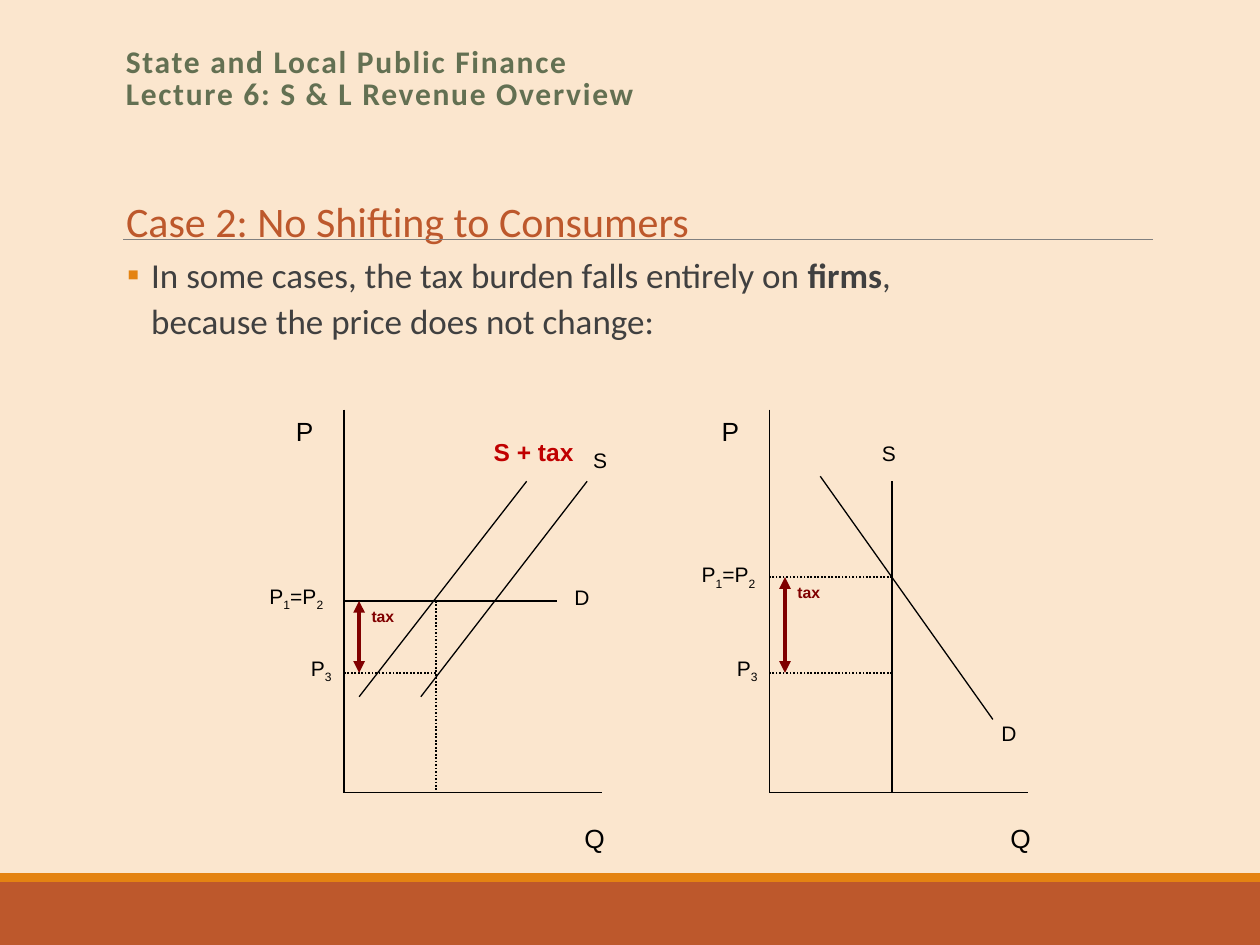
from lxml.etree import SubElement
from pptx import Presentation
from pptx.dml.color import RGBColor
from pptx.enum.dml import MSO_LINE
from pptx.enum.shapes import MSO_CONNECTOR, MSO_SHAPE
from pptx.enum.text import MSO_ANCHOR, MSO_AUTO_SIZE, PP_ALIGN
from pptx.oxml.ns import qn
from pptx.util import Inches, Pt

COLORS = {
    "background": "FBE6CE", "band": "BD582C", "stripe": "E48312",
    "rule": "808080", "course": "637052", "body": "404040",
    "ink": "000000", "tax": "800000", "shifted": "C00000",
}
COURSE = "State and Local Public Finance\vLecture 6: S & L Revenue Overview"
CASE = "Case 2: No Shifting to Consumers"
STATEMENT = [("In some cases, the tax burden falls entirely on ", {}),
             ("firms", {"bold": True}),
             (", because the price does not change:", {})]
SUB = {"baseline": -25000}
EQUAL_PRICES = [("P", {}), ("1", SUB), ("=P", {}), ("2", SUB)]
NET_PRICE = [("P", {}), ("3", SUB)]

BANDS = [("band", 7, 0.5), ("stripe", 6.93, 0.07)]
AXIS_TOP, AXIS_BASE, AXIS_LENGTH = 3.25, 6.29, 2.05
NET_Y = 5.34

PANELS = [
    {
        "axis": 2.73, "price": 4.77, "quantity": 0.73, "price_label": (-0.69, -0.19),
        "curves": [((0, 4.77), (1.69, 4.77)),
                   ((0.61, 5.53), (1.93, 3.82)),
                   ((0.12, 5.53), (1.45, 3.82))],
        "guides": [((0.73, 4.77), (0.73, AXIS_BASE))],
        "labels": [("S", 1.88, 3.5, {}),
                   ("S + tax", 1.09, 3.42, {"size": 14, "bold": True, "color": "shifted"}),
                   ("D", 1.73, 4.59, {})],
    },
    {
        "axis": 6.11, "price": 4.58, "quantity": 0.97, "price_label": (-0.64, -0.17),
        "curves": [((0.97, 3.82), (0.97, AXIS_BASE)),
                   ((0.4, 3.78), (1.77, 5.71))],
        "guides": [((0.97, 4.58), (0, 4.58))],
        "labels": [("S", 0.79, 3.45, {}), ("D", 1.74, 5.67, {})],
    },
]


def rgb(name):
    return RGBColor.from_string(COLORS[name])


def write(shape, text, size=12, font="Arial", color="ink", bold=False,
          spacing=None, line_spacing=None):
    frame = shape.text_frame
    frame.word_wrap = True
    frame.auto_size = MSO_AUTO_SIZE.NONE
    frame.vertical_anchor = MSO_ANCHOR.TOP
    paragraph = frame.paragraphs[0]
    paragraph.alignment = PP_ALIGN.LEFT
    if line_spacing:
        paragraph.line_spacing = line_spacing
    for words, style in [(text, {})] if isinstance(text, str) else text:
        for index, piece in enumerate(words.split("\v")):
            if index:
                paragraph.add_line_break()
            run = paragraph.add_run()
            run.text = piece
            run.font.name = font
            run.font.size = Pt(size)
            run.font.bold = style.get("bold", bold)
            run.font.color.rgb = rgb(color)
            properties = run._r.get_or_add_rPr()
            if "baseline" in style:
                properties.set("baseline", str(style["baseline"]))
            if spacing:
                properties.set("spc", str(spacing))
    return paragraph


def add_text(slide, text, left, top, width, height, **style):
    box = slide.shapes.add_textbox(*map(Inches, (left, top, width, height)))
    return box, write(box, text, **style)


def add_line(slide, start, end, color="ink", width=0.75, dotted=False, arrows=False):
    connector = slide.shapes.add_connector(
        MSO_CONNECTOR.STRAIGHT, *map(Inches, (*start, *end)))
    connector.line.color.rgb = rgb(color)
    connector.line.width = Pt(width)
    if dotted:
        connector.line.dash_style = MSO_LINE.ROUND_DOT
    if arrows:
        outline = connector.line._get_or_add_ln()
        for tag in ("a:headEnd", "a:tailEnd"):
            SubElement(outline, qn(tag), type="triangle")
    SubElement(connector._element.spPr, qn("a:effectLst"))


def add_frame(slide):
    slide.background.fill.solid()
    slide.background.fill.fore_color.rgb = rgb("background")
    for color, top, height in BANDS:
        band = slide.shapes.add_shape(
            MSO_SHAPE.RECTANGLE, 0, Inches(top), Inches(10), Inches(height))
        band.shadow.inherit = False
        band.fill.solid()
        band.fill.fore_color.rgb = rgb(color)
        band.line.fill.background()
    add_line(slide, (0.98, 1.9), (9.15, 1.9), "rule", 0.5)


def add_statement(slide):
    box, paragraph = add_text(slide, STATEMENT, 1.01, 1.93, 6.81, 0.79, size=20,
                              font="Calibri", color="body", line_spacing=1.1)
    box.text_frame.margin_left = box.text_frame.margin_right = 0
    paragraph.space_before = Pt(6.8)
    paragraph.space_after = Pt(1.1)
    properties = paragraph._p.get_or_add_pPr()
    properties.set("marL", str(Inches(0.19)))
    properties.set("indent", str(-Inches(0.19)))
    bullet_color = SubElement(properties, qn("a:buClr"))
    SubElement(bullet_color, qn("a:srgbClr"), val=COLORS["stripe"])
    SubElement(properties, qn("a:buFont"), typeface="Calibri")
    SubElement(properties, qn("a:buChar"), char="▪")


def add_panel(slide, panel):
    axis, price = panel["axis"], panel["price"]

    def line(start, end, **style):
        add_line(slide, (axis + start[0], start[1]), (axis + end[0], end[1]), **style)

    def label(text, offset, top, width=0.6, height=0.57, **style):
        add_text(slide, text, axis + offset, top, width, height, **style)

    line((0, AXIS_TOP), (0, AXIS_BASE))
    line((0, AXIS_BASE), (AXIS_LENGTH, AXIS_BASE))
    for start, end in panel["curves"]:
        line(start, end)
    for start, end in panel["guides"] + [((panel["quantity"], NET_Y), (0, NET_Y))]:
        line(start, end, width=1, dotted=True)
    line((0.12, price), (0.12, NET_Y), color="tax", width=2.25, arrows=True)

    label("P", -0.48, AXIS_TOP, 0.36, 0.76, size=15)
    label("Q", 1.81, 6.48, 0.36, 0.76, size=15)
    offset, rise = panel["price_label"]
    label(EQUAL_PRICES, offset, price + rise, 1.21)
    label(NET_PRICE, -0.36, NET_Y - 0.19)
    label("tax", 0.12, price, 0.48, size=9, bold=True, color="tax")
    for text, offset, top, style in panel["labels"]:
        label(text, offset, top, 0.9 if len(text) > 1 else 0.6, **style)


def main():
    deck = Presentation()
    deck.slide_width, deck.slide_height = Inches(10), Inches(7.5)
    slide = deck.slides.add_slide(deck.slide_layouts[5])
    add_frame(slide)
    add_statement(slide)
    for panel in PANELS:
        add_panel(slide, panel)
    add_text(slide, COURSE, 0.9, 0.33, 8.25, 0.65, size=18, font="Calibri",
             color="course", bold=True, spacing=100, line_spacing=0.85)
    title = slide.shapes.title
    title.left, title.top, title.width, title.height = map(Inches, (0.9, 1.5, 4.81, 0.5))
    write(title, CASE, size=24, font="Calibri", color="band")
    deck.save("out.pptx")


if __name__ == "__main__":
    main()
